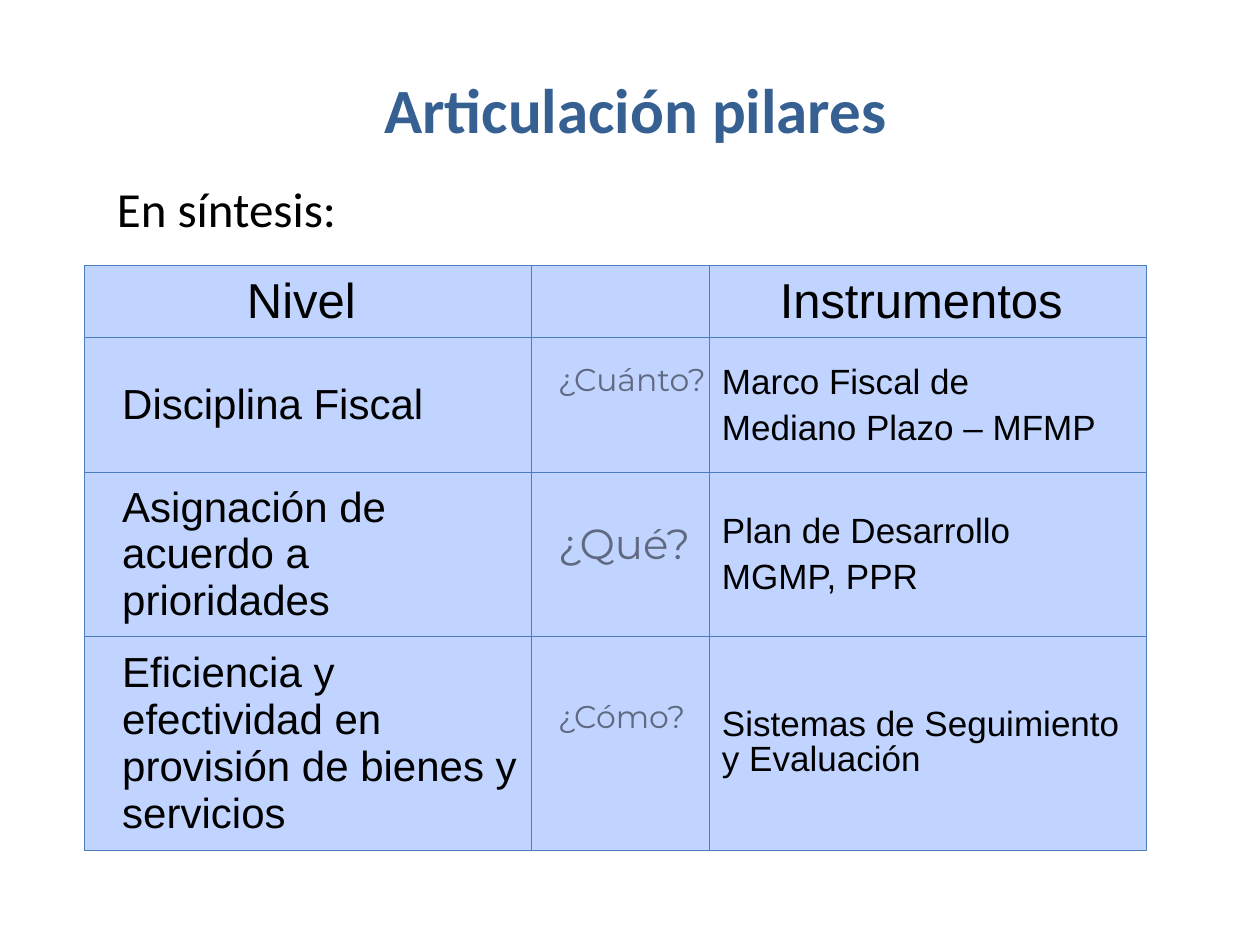
from lxml.etree import SubElement
from pptx import Presentation
from pptx.dml.color import RGBColor
from pptx.enum.text import MSO_ANCHOR, PP_ALIGN
from pptx.oxml.ns import qn
from pptx.util import Inches, Pt

# Content
HUES = {"cell": "C0D4FF", "edge": "4B7EBC", "title": "376092", "ink": "000000"}
HEAD = ["Nivel ", "", "Instrumentos "]
ROWS = [
    ("Disciplina Fiscal", ["Marco Fiscal de", "Mediano Plazo – MFMP"]),
    ("Asignación de acuerdo a prioridades", ["Plan de Desarrollo", "MGMP, PPR"]),
    ("Eficiencia y efectividad en provisión de bienes y servicios",
     ["Sistemas de Seguimiento y Evaluación"]),
]
# Question, text size, drop below the top of its row
ASKS = [("¿Cuánto?", 18, 0.13), ("¿Qué?", 24, 0.31), ("¿Cómo?", 18, 0.43)]

# Grid
LEFT, TOP = 0.67, 2.11
WIDE = [3.55, 1.41, 3.47]
HIGH = [0.57, 1.07, 1.3, 1.7]


def write(frame, lines, size=20, font="Arial", hue="ink", bold=False,
          align=PP_ALIGN.LEFT, gap=0, lead=None, indent=0, alpha=None):
    """Fill a text frame; gap is the space before, in percent of a line."""
    for i, line in enumerate(lines):
        para = frame.paragraphs[0] if i == 0 else frame.add_paragraph()
        para.alignment = align
        props = para._p.get_or_add_pPr()
        if indent:
            props.set("marL", str(Inches(indent)))
            props.set("indent", "0")
        if gap:
            space = SubElement(props, qn("a:spcBef"))
            SubElement(space, qn("a:spcPct")).set("val", str(gap * 1000))
        if lead:
            para.line_spacing = lead
        run = para.add_run()
        run.text = line
        run.font.size, run.font.name, run.font.bold = Pt(size), font, bold
        run.font.color.rgb = RGBColor.from_string(HUES[hue])
        if alpha:
            tint = run._r.rPr.find(".//" + qn("a:srgbClr"))
            SubElement(tint, qn("a:alpha")).set("val", str(alpha * 1000))


def label(slide, box, text, wrap=False, **style):
    frame = slide.shapes.add_textbox(*map(Inches, box)).text_frame
    frame.word_wrap = wrap
    write(frame, [text], **style)


def border(cell):
    props = cell._tc.get_or_add_tcPr()
    for i, side in enumerate(("lnL", "lnR", "lnT", "lnB")):
        line = props.makeelement(qn("a:" + side), {"w": str(Pt(0.75))})
        fill = SubElement(line, qn("a:solidFill"))
        SubElement(fill, qn("a:srgbClr")).set("val", HUES["edge"])
        props.insert(i, line)


def main():
    deck = Presentation()
    deck.slide_width, deck.slide_height = Inches(10), Inches(7.5)
    slide = deck.slides.add_slide(deck.slide_layouts[6])

    # Table
    size = (LEFT, TOP, sum(WIDE), sum(HIGH))
    table = slide.shapes.add_table(len(HIGH), len(WIDE), *map(Inches, size)).table
    for col, wide in zip(table.columns, WIDE):
        col.width = Inches(wide)
    for row, high in zip(table.rows, HIGH):
        row.height = Inches(high)
    for cell in table.iter_cells():
        cell.fill.solid()
        cell.fill.fore_color.rgb = RGBColor.from_string(HUES["cell"])
        cell.vertical_anchor = MSO_ANCHOR.MIDDLE
        border(cell)

    # Cell text
    for c, text in enumerate(HEAD):
        if text:
            write(table.cell(0, c).text_frame, [text], size=28, gap=20,
                  align=PP_ALIGN.CENTER)
    for r, (level, tools) in enumerate(ROWS, 1):
        write(table.cell(r, 0).text_frame, [level], size=24, indent=0.2,
              gap=50 if r == len(ROWS) else 20)
        write(table.cell(r, 2).text_frame, tools, gap=20,
              lead=0.9 if len(tools) == 1 else None)

    # Questions over the middle column, each wide enough for one line
    for r, (text, points, drop) in enumerate(ASKS, 1):
        top = TOP + sum(HIGH[:r]) + drop
        label(slide, (LEFT + WIDE[0] + 0.11, top, 1.42, 0.7), text,
              size=points, font="Montserrat", alpha=50)

    # Headings
    label(slide, (0.42, 0.51, 9.25, 0.71), "Articulación pilares", wrap=True,
          size=36, font="Calibri", hue="title", bold=True, gap=20,
          align=PP_ALIGN.CENTER)
    label(slide, (0.83, 1.37, 1.96, 0.57), "En síntesis:", size=28, font="Calibri")

    deck.save("out.pptx")


if __name__ == "__main__":
    main()
